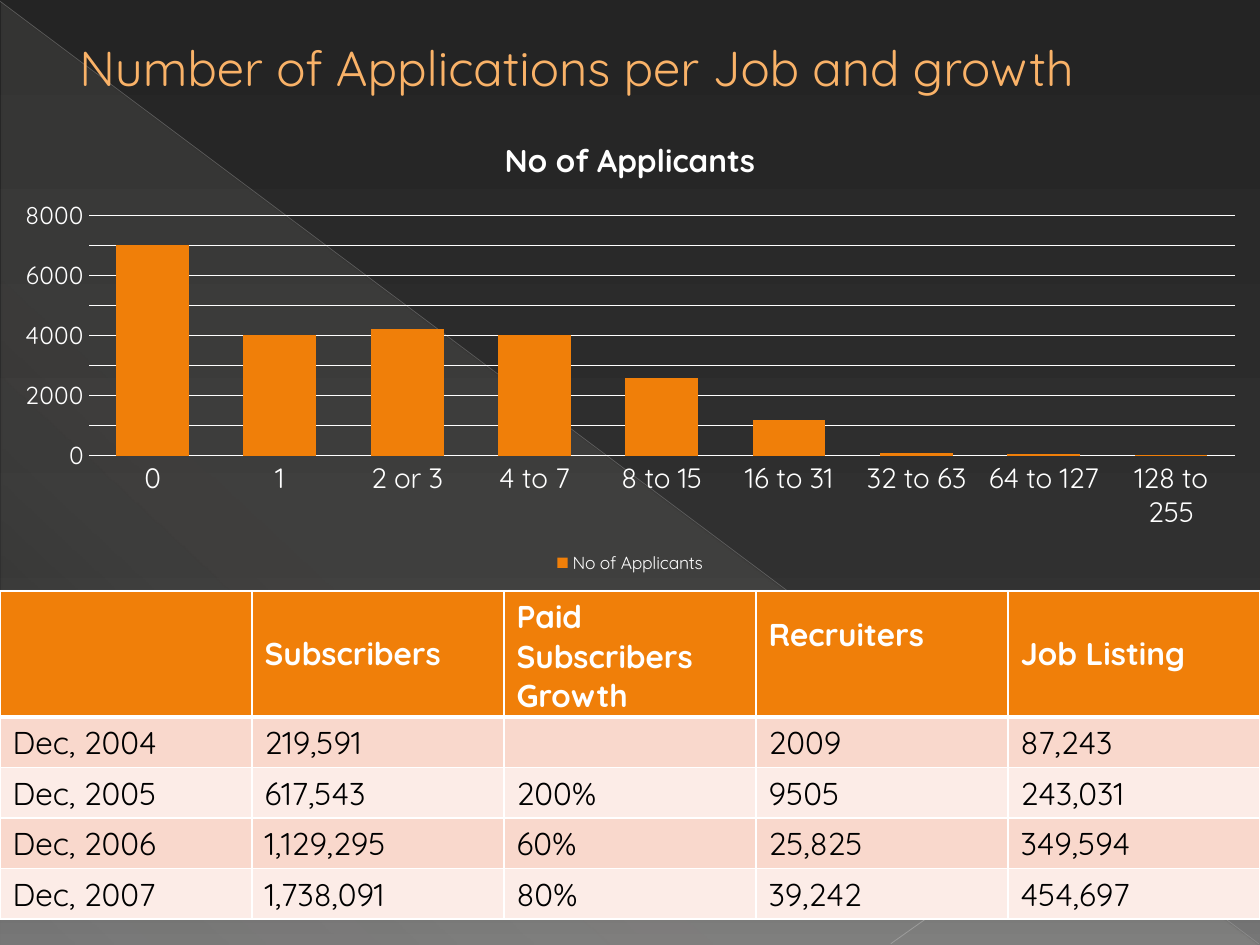
from lxml import etree
from pptx import Presentation
from pptx.chart.data import CategoryChartData
from pptx.dml.color import RGBColor
from pptx.enum.chart import XL_CHART_TYPE, XL_LEGEND_POSITION, XL_TICK_MARK
from pptx.enum.shapes import MSO_CONNECTOR, MSO_SHAPE
from pptx.enum.text import MSO_ANCHOR
from pptx.oxml.ns import qn
from pptx.util import Inches, Pt

COLUMN = XL_CHART_TYPE.COLUMN_CLUSTERED
BOTTOM = XL_LEGEND_POSITION.BOTTOM
NO_TICK = XL_TICK_MARK.NONE
TRIANGLE = MSO_SHAPE.RIGHT_TRIANGLE
STRAIGHT = MSO_CONNECTOR.STRAIGHT
TOP, MIDDLE = MSO_ANCHOR.TOP, MSO_ANCHOR.MIDDLE

FACE = "Quicksand"
HEX = {
    "white": "FFFFFF", "black": "000000", "orange": "F07F09",
    "title": "F9B268", "rose": "F9D8CC", "pale": "FCECE7",
    "beige": "E3DED1", "edge": "B6B6B6", "edge2": "BFBFBF",
    "dark": "242424", "mid": "303030", "gray": "767676",
}

CATS = ["0", "1", "2 or 3", "4 to 7", "8 to 15", "16 to 31",
        "32 to 63", "64 to 127", "128 to 255"]
COUNTS = [7000, 4000, 4200, 4000, 2600, 1200, 100, 50, 10]
ROWS = [
    ["", "Subscribers", "Paid Subscribers Growth", "Recruiters", "Job Listing"],
    ["Dec, 2004", "219,591", "", "2009", "87,243"],
    ["Dec, 2005", "617,543", "200%", "9505", "243,031"],
    ["Dec, 2006", "1,129,295", "60%", "25,825", "349,594"],
    ["Dec, 2007", "1,738,091", "80%", "39,242", "454,697"],
]


def rgb(name):
    return RGBColor.from_string(HEX[name])


def style(font, size, color, bold=False):
    look = {"name": FACE, "size": Pt(size), "bold": bold}
    for key, value in look.items():
        setattr(font, key, value)
    font.color.rgb = rgb(color)


def tint(parent, name, alpha=100):
    color = etree.SubElement(parent, qn("a:srgbClr"), val=HEX[name])
    if alpha < 100:
        etree.SubElement(color, qn("a:alpha"), val=str(alpha * 1000))


def blend(fill, owner, angle, stops):
    """Set a linear gradient of (position, color, alpha) stops."""
    fill.gradient()
    fill.gradient_angle = 360 - angle
    group = next(owner.iter(qn("a:gsLst")))
    for old in list(group):
        group.remove(old)
    for pos, name, alpha in stops:
        stop = etree.SubElement(group, qn("a:gs"), pos=str(pos * 1000))
        tint(stop, name, alpha)


def add_line(slide, start, end, color, width, alpha):
    ends = [Inches(v) for v in (*start, *end)]
    line = slide.shapes.add_connector(STRAIGHT, *ends)
    line.line.width = Pt(width)
    line.line.color.rgb = rgb(color)
    props = line._element.spPr
    shade = next(props.iter(qn("a:srgbClr")))
    etree.SubElement(shade, qn("a:alpha"), val=str(alpha * 1000))
    etree.SubElement(props, qn("a:effectLst"))


def add_back(slide):
    blend(slide.background.fill, slide._element, 90,
          [(0, "dark", 100), (60, "mid", 100), (100, "gray", 100)])
    box = [Inches(v) for v in (0.01, 0.02, 9.98, 7.48)]
    wedge = slide.shapes.add_shape(TRIANGLE, *box)
    wedge.shadow.inherit = False
    wedge.line.fill.background()
    blend(wedge.fill, wedge._element, 133,
          [(0, "beige", 10), (70, "beige", 8), (100, "beige", 1)])
    add_line(slide, (0, 0.01), (9.99, 7.49), "edge", 0.39, 35)
    add_line(slide, (10, 5.41), (7.07, 7.49), "edge2", 0.47, 45)


def add_title(slide, box):
    frame = slide.shapes.add_textbox(*box).text_frame
    look = {"word_wrap": True, "vertical_anchor": TOP,
            "margin_left": Inches(0.63)}
    for key, value in look.items():
        setattr(frame, key, value)
    run = frame.paragraphs[0].add_run()
    run.text = "Number of Applications per Job and growth"
    style(run.font, 28, "title")


def add_bars(slide, box):
    data = CategoryChartData()
    data.categories = CATS
    data.add_series("No of Applicants", COUNTS)
    chart = slide.shapes.add_chart(COLUMN, *box, data).chart
    style(chart.font, 10, "white")

    # Title and legend
    chart.has_title = True
    para = chart.chart_title.text_frame.paragraphs[0]
    run = para.add_run()
    run.text = "No of Applicants"
    style(run.font, 18, "white", True)
    chart.has_legend = True
    chart.legend.position = BOTTOM
    chart.legend.include_in_layout = False
    style(chart.legend.font, 10, "white")

    # Axes
    for axis, size in ((chart.category_axis, 16), (chart.value_axis, 14)):
        axis.major_tick_mark = axis.minor_tick_mark = NO_TICK
        style(axis.tick_labels.font, size, "white")
    chart.category_axis.format.line.color.rgb = rgb("white")
    scale = chart.value_axis
    look = {"minimum_scale": 0, "maximum_scale": 8000, "major_unit": 1000,
            "has_major_gridlines": True}
    for key, value in look.items():
        setattr(scale, key, value)
    scale.format.line.fill.background()
    scale.major_gridlines.format.line.color.rgb = rgb("white")

    # Bars
    plot = chart.plots[0]
    look = {"gap_width": 75, "overlap": -25, "vary_by_categories": False}
    for key, value in look.items():
        setattr(plot, key, value)
    fill = plot.series[0].format.fill
    fill.solid()
    fill.fore_color.rgb = rgb("orange")


def add_edges(cell, widths):
    props = cell._tc.get_or_add_tcPr()
    for spot, (side, width) in enumerate(widths.items()):
        edge = etree.Element(qn("a:ln" + side), w=str(Pt(width)))
        tint(etree.SubElement(edge, qn("a:solidFill")), "white")
        props.insert(spot, edge)


def add_grid(slide, box):
    table = slide.shapes.add_table(len(ROWS), len(ROWS[0]), *box).table
    for col in table.columns:
        col.width = Inches(2)
    for r, texts in enumerate(ROWS):
        head = r == 0
        table.rows[r].height = Inches(1 if head else 0.4)
        shade = "orange" if head else ("pale", "rose")[r % 2]
        for c, text in enumerate(texts):
            cell = table.cell(r, c)
            cell.fill.solid()
            cell.fill.fore_color.rgb = rgb(shade)
            cell.vertical_anchor = MIDDLE if head else TOP
            cell.text = text
            style(cell.text_frame.paragraphs[0].font, 18,
                  "white" if head else "black", head)
            add_edges(cell, {"L": 1, "R": 1, "T": 3 if r == 1 else 1,
                             "B": 3 if head else 1})
    # This heading sits half a line above the others
    table.cell(0, 3).margin_bottom = Inches(0.36)


def main():
    deck = Presentation()
    deck.slide_width, deck.slide_height = Inches(10), Inches(7.5)
    slide = deck.slides.add_slide(deck.slide_layouts[6])
    add_back(slide)
    parts = ((add_title, 0.25, 1.08), (add_bars, 0.92, 3.67),
             (add_grid, 4.69, 2.6))
    for place, top, height in parts:
        place(slide, (Inches(0), Inches(top), Inches(10), Inches(height)))
    deck.save("out.pptx")


if __name__ == "__main__":
    main()
